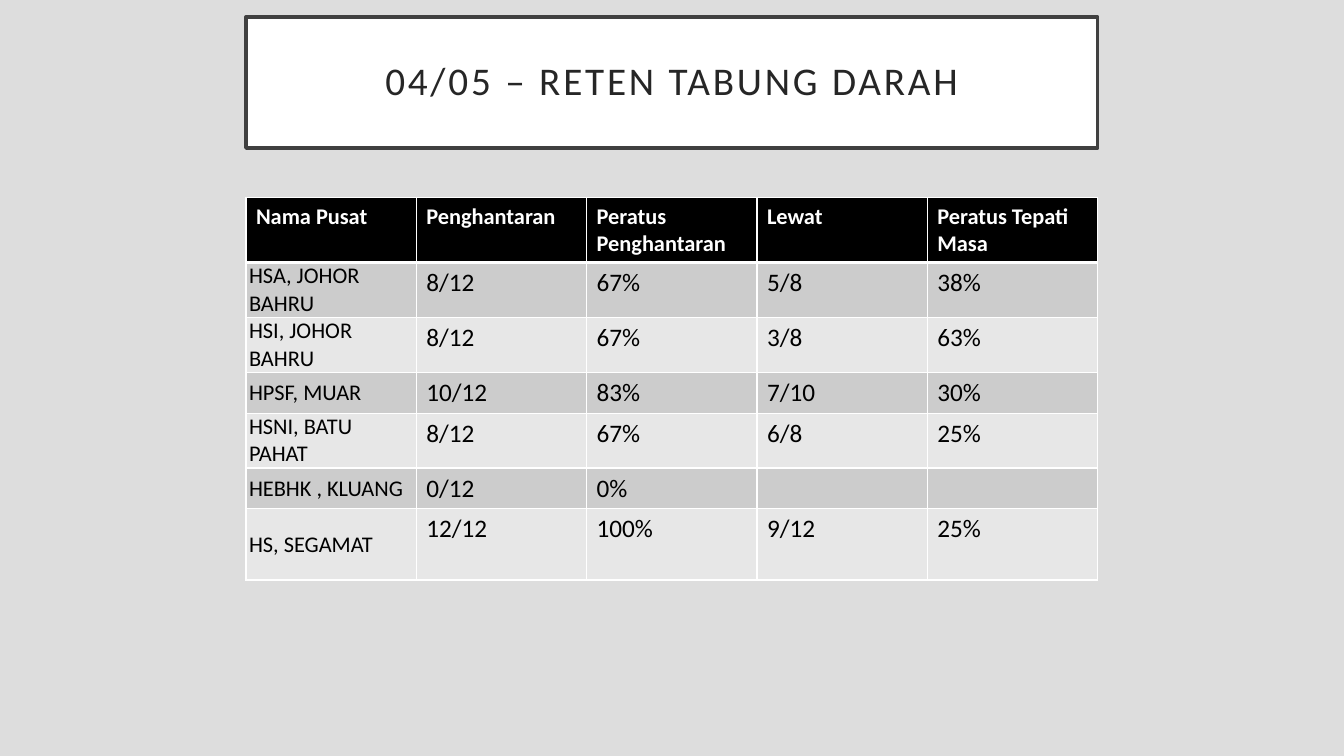
from lxml import etree
from pptx import Presentation
from pptx.dml.color import RGBColor
from pptx.enum.text import MSO_ANCHOR, PP_ALIGN
from pptx.oxml.ns import qn
from pptx.util import Pt

MIDDLE, TOP = MSO_ANCHOR.MIDDLE, MSO_ANCHOR.TOP
CENTER = PP_ALIGN.CENTER
FONT = "Calibri"
LEFT, WIDTH = 175.7, 608.4


def color(value):
    return RGBColor.from_string(value)


def add_borders(cell, widths):
    """Draw white borders; widths are in points by side."""
    properties = cell._tc.get_or_add_tcPr()
    for index, (side, width) in enumerate(widths.items()):
        line = etree.Element(qn(f"a:ln{side}"), w=str(Pt(width)))
        fill = etree.SubElement(line, qn("a:solidFill"))
        etree.SubElement(fill, qn("a:srgbClr"), val="FFFFFF")
        properties.insert(index, line)


# Page
deck = Presentation()
deck.slide_width, deck.slide_height = Pt(960), Pt(540)
page = deck.slides.add_slide(deck.slide_layouts[5])
page.background.fill.solid()
page.background.fill.fore_color.rgb = color("DDDDDD")

# Title
title = page.shapes.title
title.left, title.top, title.width, title.height = Pt(LEFT), Pt(12.2), Pt(WIDTH), Pt(93.6)
title.fill.solid()
title.fill.fore_color.rgb = color("FFFFFF")
title.line.color.rgb = color("404040")
title.line.width = Pt(2.5)
frame = title.text_frame
frame.word_wrap = True
frame.vertical_anchor = MIDDLE
frame.margin_left = frame.margin_right = frame.margin_top = frame.margin_bottom = Pt(14.4)
para = frame.paragraphs[0]
para.alignment = CENTER
para.line_spacing = 0.9
para.font.name, para.font.size = FONT, Pt(28)
para.font.color.rgb = color("262626")
span = para.add_run()
span.text = "04/05 – RETEN TABUNG DARAH"
span._r.get_or_add_rPr().set("spc", "200")

# Table
rows = [
    ("Nama Pusat", "Penghantaran", "Peratus Penghantaran", "Lewat", "Peratus Tepati Masa"),
    ("HSA, JOHOR BAHRU", "8/12", "67%", "5/8", "38%"),
    ("HSI, JOHOR BAHRU", "8/12", "67%", "3/8", "63%"),
    ("HPSF, MUAR", "10/12", "83%", "7/10", "30%"),
    ("HSNI, BATU PAHAT", "8/12", "67%", "6/8", "25%"),
    ("HEBHK , KLUANG", "0/12", "0%", "", ""),
    ("HS, SEGAMAT", "12/12", "100%", "9/12", "25%"),
]
heights = [46.4, 39.2, 39.2, 29.2, 39.2, 29.2, 50.8]
table = page.shapes.add_table(
    len(rows), len(rows[0]), Pt(LEFT), Pt(141.2), Pt(WIDTH), Pt(sum(heights))
).table
for column in table.columns:
    column.width = Pt(WIDTH / len(rows[0]))

for r, (values, height) in enumerate(zip(rows, heights)):
    table.rows[r].height = Pt(height)
    header = r == 0
    for c, value in enumerate(values):
        cell = table.cell(r, c)
        center_name = c == 0 and not header
        cell.fill.solid()
        cell.fill.fore_color.rgb = color("000000" if header else "CCCCCC" if r % 2 else "E7E7E7")
        add_borders(cell, {"L": 1, "R": 1, "T": 3 if r == 1 else 1, "B": 3 if header else 1})
        cell.vertical_anchor = MIDDLE if center_name else TOP
        if center_name:
            cell.margin_left = cell.margin_right = Pt(2.2)
            cell.margin_top = cell.margin_bottom = Pt(0)
        cell.text = value
        font = cell.text_frame.paragraphs[0].font
        font.name = FONT
        font.size = Pt(16 if header or c == 0 else 18)
        font.bold = header
        font.color.rgb = color("FFFFFF" if header else "000000")

deck.save("out.pptx")
